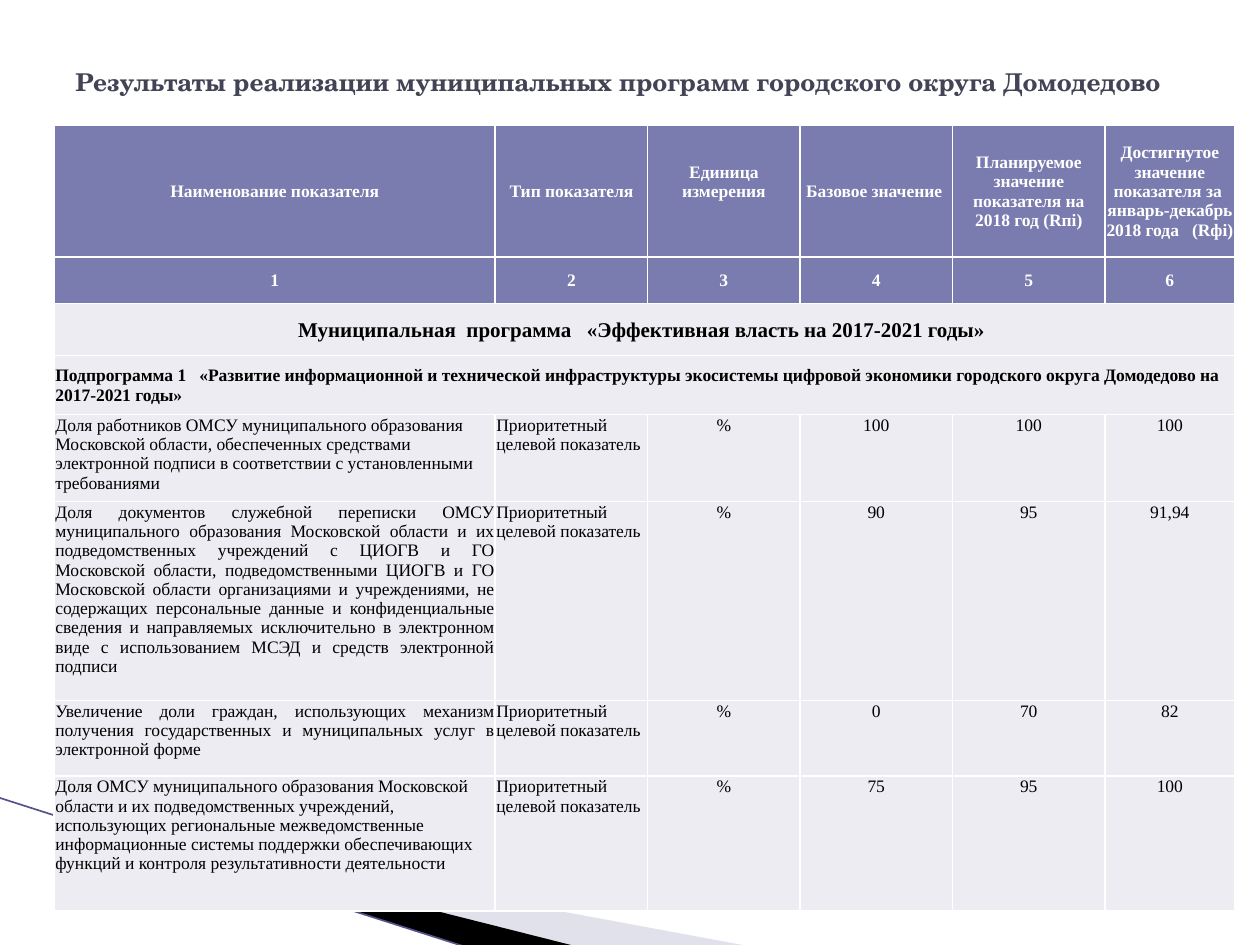
from lxml.etree import SubElement as add_element
from pptx import Presentation
from pptx.dml.color import RGBColor as Color
from pptx.enum.shapes import MSO_CONNECTOR as Connector
from pptx.enum.text import MSO_ANCHOR as Anchor, PP_ALIGN as Align
from pptx.oxml.ns import qn
from pptx.util import Inches, Pt

COLORS = {
    "title": "424456", "header": "7A7BAE", "body": "ECECF2",
    "white": "FFFFFF", "black": "000000", "lilac": "B6B6D1", "line": "53548A",
}
TITLE_FONT, TABLE_FONT = "TeX Gyre Schola", "Times New Roman"
GRID_COLUMNS, GRID_ROWS = 100, 75
UNIT = Inches(10) // GRID_COLUMNS
COLUMN_WIDTHS = [35, 12.1, 12.1, 12.1, 12.1, 10.3]
ROW_HEIGHTS = [10.5, 3.7, 4.1, 4.7, 6.9, 15.8, 6, 10.7]
CELL_MARGIN = 0.1
UNIT_HEADER_COLUMN, UNIT_HEADER_LIFT = 2, 1.55

HEADERS = [
    "Наименование показателя", "Тип показателя", "Единица измерения", "Базовое значение ",
    "Планируемое значение показателя на 2018 год (Rпi)",
    "Достигнутое значение показателя за  январь-декабрь 2018 года   (Rфi)",
]
PROGRAM = "Муниципальная  программа   «Эффективная власть на 2017-2021 годы» "
SUBPROGRAM = (
    "Подпрограмма 1   «Развитие информационной и технической инфраструктуры экосистемы "
    "цифровой экономики городского округа Домодедово на 2017-2021 годы»"
)
INDICATOR_TYPE = "Приоритетный целевой показатель"
INDICATORS = [
    ("Доля работников ОМСУ муниципального образования Московской области, обеспеченных "
     "средствами электронной подписи в соответствии с установленными требованиями",
     Align.LEFT, ["100", "100", "100"]),
    ("Доля документов служебной переписки ОМСУ муниципального образования Московской области "
     "и их подведомственных учреждений с ЦИОГВ и ГО Московской области, подведомственными "
     "ЦИОГВ и ГО Московской области организациями и учреждениями, не содержащих персональные "
     "данные и конфиденциальные сведения и направляемых исключительно в электронном виде "
     "с использованием МСЭД и средств электронной подписи",
     Align.JUSTIFY, ["90", "95", "91,94"]),
    ("Увеличение доли граждан, использующих механизм получения государственных "
     "и муниципальных услуг в электронной форме",
     Align.JUSTIFY, ["0", "70", "82"]),
    ("Доля ОМСУ муниципального образования Московской области и их подведомственных "
     "учреждений, использующих региональные межведомственные информационные системы "
     "поддержки обеспечивающих функций и контроля результативности деятельности",
     Align.LEFT, ["75", "95", "100"]),
]


def grid(*counts):
    """Turn counts of grid units into lengths."""
    return [round(count * UNIT) for count in counts]


def color(name):
    """Look up a named colour."""
    return Color.from_string(COLORS[name])


def format_font(font, name, size, color_name, bold):
    """Set the look of a run."""
    font.name, font.size, font.bold = name, Pt(size), bold
    font.color.rgb = color(color_name)


def add_wedge(slide, points, color_name, opacity=100):
    """Draw a filled decorative wedge."""
    start, *corners = [grid(*point) for point in points]
    builder = slide.shapes.build_freeform(*start)
    builder.add_line_segments(corners, close=True)
    shape = builder.convert_to_shape()
    shape.shadow.inherit = False
    shape.fill.solid()
    shape.fill.fore_color.rgb = color(color_name)
    shape.line.fill.background()
    if opacity < 100:
        tint = shape.fill._xPr.find(qn("a:solidFill"))[0]
        add_element(tint, qn("a:alpha"), val=str(opacity * 1000))


def add_rule(slide, start, end):
    """Draw the thin slanted line."""
    connector = slide.shapes.add_connector(Connector.STRAIGHT, *grid(*start), *grid(*end))
    connector.line.color.rgb = color("line")
    connector.line.width = Pt(0.95)
    add_element(connector._element.spPr, qn("a:effectLst"))


def add_title(slide, text):
    """Place the slide heading."""
    shape = slide.shapes.add_textbox(*grid(5, 3, 90, 6.9))
    frame = shape.text_frame
    frame.word_wrap = True
    frame.vertical_anchor = Anchor.MIDDLE
    frame.text = text
    format_font(frame.paragraphs[0].runs[0].font, TITLE_FONT, 14, "title", True)


def add_borders(cell):
    """Outline a cell with white lines."""
    properties = cell._tc.get_or_add_tcPr()
    for side in ("lnL", "lnR", "lnT", "lnB"):
        line = add_element(properties, qn(f"a:{side}"), w=str(Pt(1)))
        fill = add_element(line, qn("a:solidFill"))
        add_element(fill, qn("a:srgbClr"), val=COLORS["white"])


def style_cell(cell, fill):
    """Give a cell its borders, fill and margins."""
    add_borders(cell)
    cell.fill.solid()
    cell.fill.fore_color.rgb = color(fill)
    cell.margin_left, cell.margin_right, cell.margin_top = grid(*[CELL_MARGIN] * 3)
    cell.margin_bottom = 0


def write_cell(cell, text, align, anchor=Anchor.TOP, size=10, color_name="black", bold=False):
    """Write formatted text into a cell."""
    cell.vertical_anchor = anchor
    cell.text_frame.text = text
    paragraph = cell.text_frame.paragraphs[0]
    paragraph.alignment = align
    format_font(paragraph.runs[0].font, TABLE_FONT, size, color_name, bold)


def write_header(table):
    """Fill the column names and column numbers."""
    numbers = [str(number + 1) for number in range(len(HEADERS))]
    for row, texts in enumerate((HEADERS, numbers)):
        for column, text in enumerate(texts):
            write_cell(table.cell(row, column), text, Align.CENTER, Anchor.MIDDLE,
                       color_name="white", bold=True)
    table.cell(0, UNIT_HEADER_COLUMN).margin_bottom = grid(UNIT_HEADER_LIFT)[0]


def write_sections(table):
    """Fill the two full-width section rows."""
    sections = [(PROGRAM, Align.CENTER, 12), (SUBPROGRAM, Align.LEFT, 10)]
    for row, (text, align, size) in enumerate(sections, start=2):
        table.cell(row, 0).merge(table.cell(row, len(HEADERS) - 1))
        write_cell(table.cell(row, 0), text, align, Anchor.MIDDLE, size, bold=True)


def write_indicators(table):
    """Fill the indicator rows."""
    for row, (name, align, values) in enumerate(INDICATORS, start=4):
        texts = [name, INDICATOR_TYPE, "%", *values]
        aligns = [align, Align.LEFT] + [Align.CENTER] * 4
        for column, (text, alignment) in enumerate(zip(texts, aligns)):
            write_cell(table.cell(row, column), text, alignment)


def add_results_table(slide):
    """Build the table of programme results."""
    frame = slide.shapes.add_table(
        len(ROW_HEIGHTS), len(COLUMN_WIDTHS),
        *grid(4.3, 9.9, sum(COLUMN_WIDTHS), sum(ROW_HEIGHTS)))
    table = frame.table
    table.horz_banding = False
    for column, width in zip(table.columns, grid(*COLUMN_WIDTHS)):
        column.width = width
    for index, height in enumerate(grid(*ROW_HEIGHTS)):
        table.rows[index].height = height
        for cell in table.rows[index].cells:
            style_cell(cell, "header" if index < 2 else "body")
    write_header(table)
    write_sections(table)
    write_indicators(table)


def main():
    """Build and save the slide."""
    presentation = Presentation()
    presentation.slide_width, presentation.slide_height = grid(GRID_COLUMNS, GRID_ROWS)
    slide = presentation.slides.add_slide(presentation.slide_layouts[6])
    add_wedge(slide, [(5.5, 65.1), (59.5, 75.1), (45.6, 75.1), (5.5, 65)], "lilac", 40)
    add_wedge(slide, [(5.3, 64.9), (45.7, 75.1), (37.2, 75.2), (5.4, 65)], "black")
    add_rule(slide, (-0.1, 63.3), (37.1, 75.2))
    add_title(slide, "Результаты реализации муниципальных программ городского округа Домодедово")
    add_results_table(slide)
    presentation.save("out.pptx")


if __name__ == "__main__":
    main()
